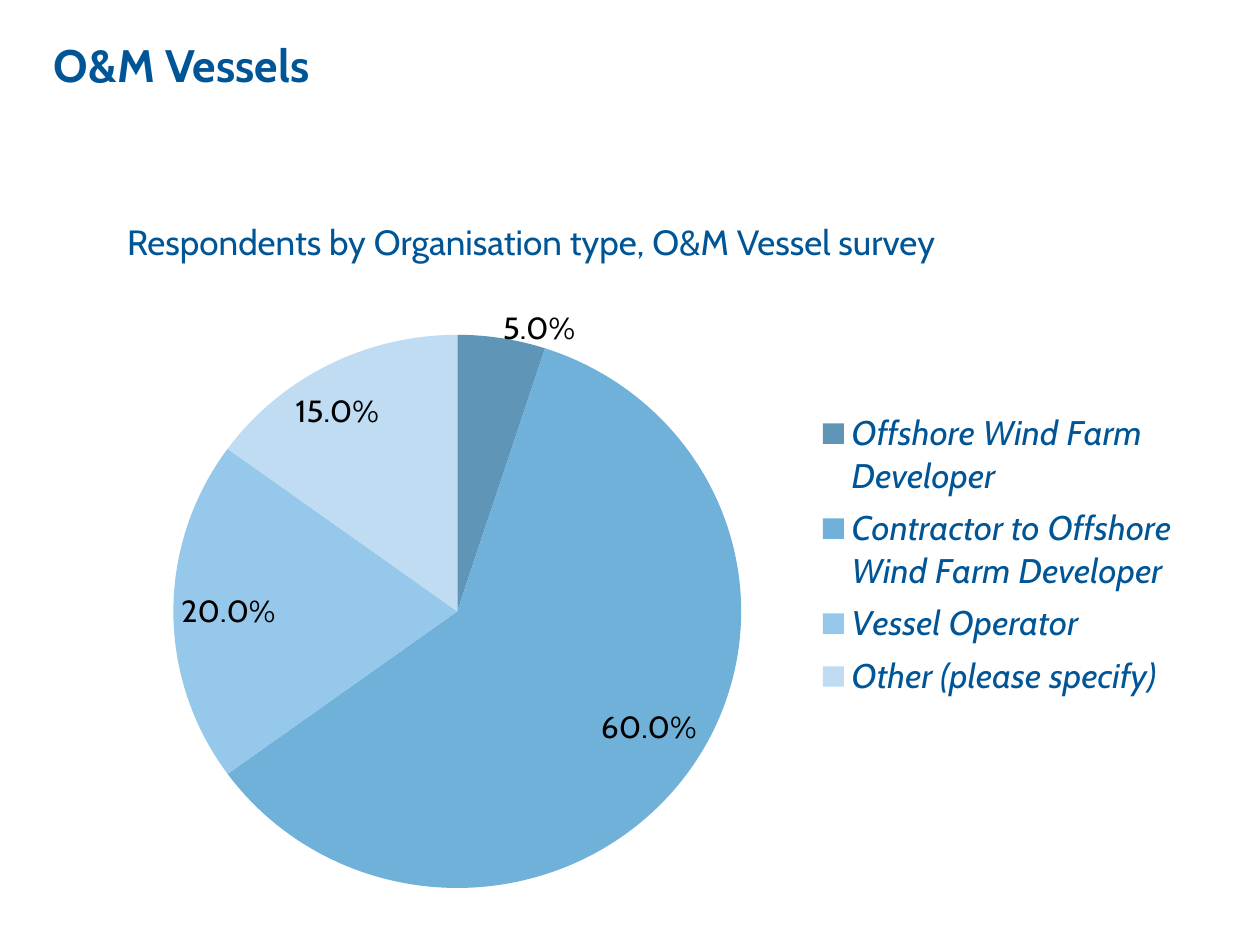
from dataclasses import dataclass

from pptx import Presentation
from pptx.chart.data import CategoryChartData
from pptx.dml.color import RGBColor
from pptx.enum.chart import XL_CHART_TYPE, XL_LABEL_POSITION, XL_LEGEND_POSITION
from pptx.oxml import parse_xml
from pptx.oxml.ns import nsdecls
from pptx.util import Inches, Pt

PIE = XL_CHART_TYPE.PIE
LEGEND_RIGHT = XL_LEGEND_POSITION.RIGHT
BEST_FIT = XL_LABEL_POSITION.BEST_FIT


@dataclass(frozen=True)
class Theme:
    font: str = "Cabin"
    blue: str = "005596"
    black: str = "000000"
    slices: tuple = ("5F95B7", "70B1D9", "95C8EB", "C0DCF2")
    title_size: int = 26
    body_size: int = 20
    label_size: int = 18


THEME = Theme()

RESPONDENTS = {
    "Offshore Wind Farm Developer": 0.05,
    "Contractor to Offshore Wind Farm Developer": 0.6,
    "Vessel Operator": 0.2,
    "Other (please specify)": 0.15,
}


def manual_layout(**settings):
    """Return a chart layout element with the given settings."""
    children = "".join(f'<c:{name} val="{value}"/>' for name, value in settings.items())
    return parse_xml(
        f"<c:layout {nsdecls('c')}><c:manualLayout>{children}</c:manualLayout></c:layout>"
    )


def place(element, index, layout):
    """Give a chart part its layout as the child at this index."""
    for existing in element.findall("{*}layout"):
        element.remove(existing)
    element.insert(index, layout)


class SlideBuilder:
    def __init__(self, presentation, theme):
        self.presentation = presentation
        self.theme = theme
        self.slide = presentation.slides.add_slide(presentation.slide_layouts[6])

    def box(self, left, top, width, height):
        """Turn shares of the slide's size into lengths."""
        across, down = self.presentation.slide_width, self.presentation.slide_height
        return [int(share * size) for share, size in
                zip((left, top, width, height), (across, down, across, down))]

    def style(self, font, color, size, **values):
        font.color.rgb = RGBColor.from_string(color)
        for name, value in {"name": self.theme.font, "size": Pt(size), **values}.items():
            setattr(font, name, value)

    def text(self, words, box, size, bold=False):
        shape = self.slide.shapes.add_textbox(*self.box(*box))
        frame = shape.text_frame
        frame.word_wrap = True
        run = frame.paragraphs[0].add_run()
        run.text = words
        self.style(run.font, self.theme.blue, size, bold=bold)

    def pie(self, shares, box, plot, legend):
        data = CategoryChartData(number_format="0.0%")
        data.categories = list(shares)
        data.add_series("Series 1", list(shares.values()))
        chart = self.slide.shapes.add_chart(PIE, *self.box(*box), data).chart
        chart.has_title = False
        self.style(chart.font, self.theme.blue, 10)

        # Legend
        chart.has_legend = True
        chart.legend.position = LEGEND_RIGHT
        chart.legend.include_in_layout = False
        self.style(chart.legend.font, self.theme.blue, self.theme.body_size, italic=True)

        # Places of the legend and the plot area
        edges = {"xMode": "edge", "yMode": "edge"}
        parts = chart._chartSpace.chart
        place(parts.find("{*}legend"), 1, manual_layout(**edges, **legend))
        place(parts.plotArea, 0, manual_layout(layoutTarget="inner", **edges, **plot))

        # Slices
        area = chart.plots[0]
        area.vary_by_categories = True
        series = area.series[0]
        for index, color in enumerate(self.theme.slices):
            fill = series.points[index].format.fill
            fill.solid()
            fill.fore_color.rgb = RGBColor.from_string(color)

        # Value labels
        labels = series.data_labels
        for name, value in {"show_value": True, "show_percentage": False,
                            "number_format": "0.0%", "number_format_is_linked": False,
                            "position": BEST_FIT}.items():
            setattr(labels, name, value)
        self.style(labels.font, self.theme.black, self.theme.label_size)


def main():
    presentation = Presentation()
    presentation.slide_width, presentation.slide_height = Inches(10), Inches(7.5)
    builder = SlideBuilder(presentation, THEME)

    # Headings
    builder.text("O&M Vessels", (0.033, 0.033, 0.875, 0.087),
                 THEME.title_size, bold=True)
    builder.text("Respondents by Organisation type, O&M Vessel survey",
                 (0.091, 0.227, 0.795, 0.058), THEME.body_size)

    # Survey chart
    builder.pie(RESPONDENTS, (0.059, 0.311, 0.898, 0.64),
                plot={"x": 0.024, "y": 0.043, "w": 0.629, "h": 0.939},
                legend={"x": 0.653, "y": 0.157, "w": 0.326, "h": 0.52})

    presentation.save("out.pptx")


if __name__ == "__main__":
    main()
